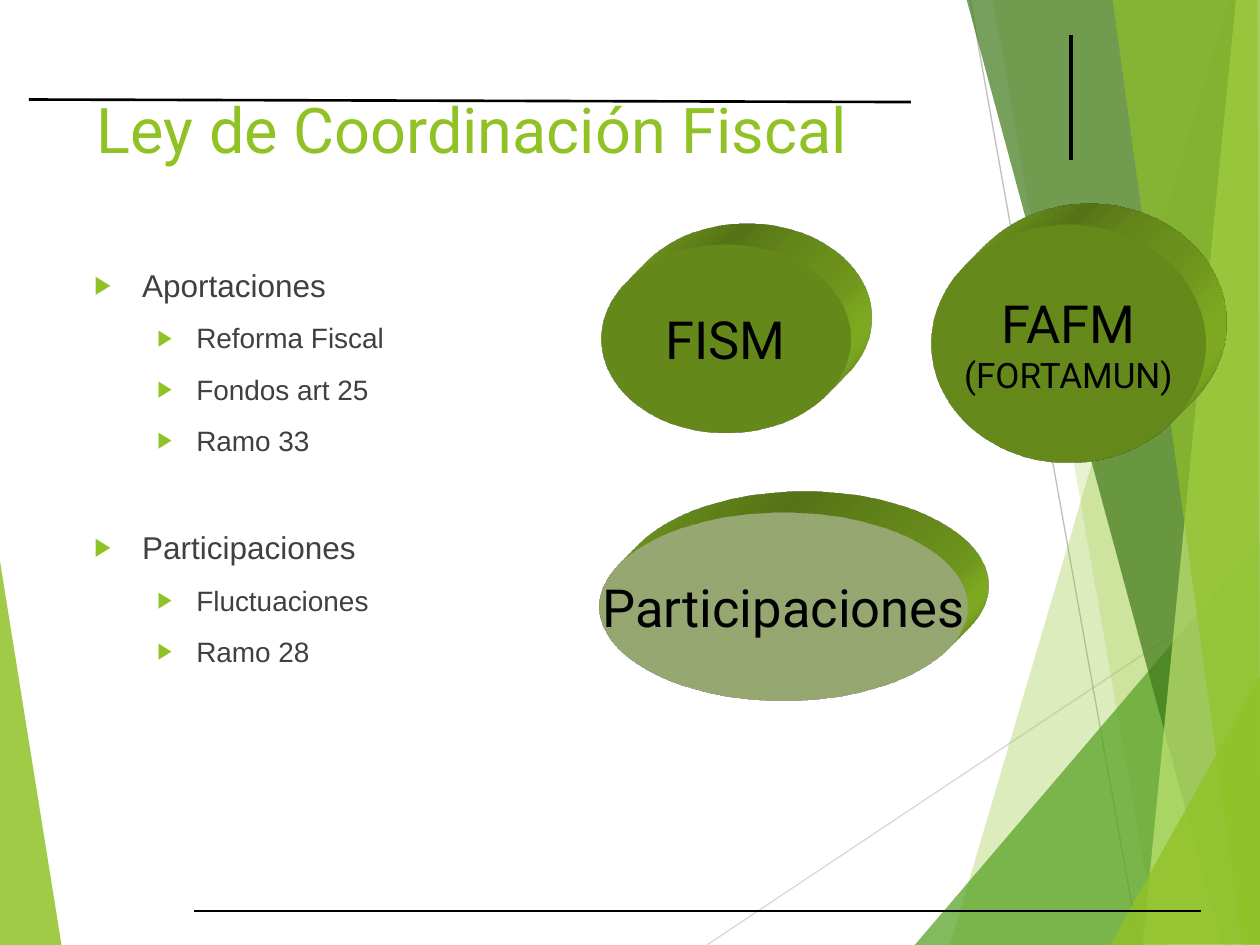
from lxml import etree
from pptx import Presentation
from pptx.dml.color import RGBColor
from pptx.enum.shapes import MSO_CONNECTOR, MSO_SHAPE
from pptx.enum.text import MSO_ANCHOR, PP_ALIGN
from pptx.oxml import parse_xml
from pptx.oxml.ns import nsdecls, qn
from pptx.util import Pt

PX = 9144
STRAIGHT = MSO_CONNECTOR.STRAIGHT
OVAL = MSO_SHAPE.OVAL
TOP, MIDDLE = MSO_ANCHOR.TOP, MSO_ANCHOR.MIDDLE
LEFT, CENTER = PP_ALIGN.LEFT, PP_ALIGN.CENTER

GREEN = "90C226"
BLACK = "000000"

LEFT_FACET = ([(-1, 439), (49, 751), (-1, 750)], GREEN, 85)
RIGHT_FACETS = [
    ([(975, 0), (754, 750), (1002, 751), (1001, 1)], GREEN, 30),
    ([(788, -1), (919, 750), (1001, 750), (1001, -1)], GREEN, 20),
    ([(726, 750), (1000, 429), (1001, 750)], "54A021", 72),
    ([(767, -1), (970, 750), (1001, 749), (1001, -1)], "3F7819", 70),
    ([(981, -1), (907, 750), (1001, 750), (1000, -1)], "C0E474", 70),
    ([(883, -1), (986, 750), (1000, 750), (998, -1)], GREEN, 65),
    ([(881, 750), (1001, 535), (1001, 749)], GREEN, 80),
]
THIN_LINES = [
    ((561, 750), (1001, 457), "D9D9D9", 0.75),
    ((770, 0), (904, 750), "BFBFBF", 0.75),
]
RULES = [
    ((850, 28), (850, 127), BLACK, 1.75),
    ((723, 81), (23, 79), BLACK, 1.5),
    ((154, 723), (953, 723), BLACK, 1.5),
]
OUTLINE = [
    ("Aportaciones", ["Reforma Fiscal", "Fondos art 25", "Ramo 33"]),
    ("Participaciones", ["Fluctuaciones", "Ramo 28"]),
]
FUNDS = [
    ((477, 194, 198, 149), GREEN, [("FISM", 30)]),
    ((739, 178, 218, 189), GREEN, [("FAFM", 30), ("(FORTAMUN)", 20)]),
    ((476, 407, 292, 149), "D5EDA2", [("Participaciones", 30)]),
]


def rgb(value):
    """Return a colour from a hex string."""
    return RGBColor.from_string(value)


def emu(*lengths):
    """Turn px lengths into EMU."""
    return [n * PX for n in lengths]


def add_facet(s, points, color, alpha):
    """Draw a translucent polygon."""
    builder = s.shapes.build_freeform(*points[0], scale=PX)
    builder.add_line_segments(points[1:], close=True)
    sp = builder.convert_to_shape()
    sp.shadow.inherit = False
    sp.fill.solid()
    sp.fill.fore_color.rgb = rgb(color)
    sp.line.fill.background()
    clr = sp.fill._xPr.find(qn("a:solidFill"))[0]
    etree.SubElement(clr, qn("a:alpha")).set("val", str(alpha * 1000))


def add_line(s, start, end, color, width):
    """Draw a straight line."""
    line = s.shapes.add_connector(STRAIGHT, *emu(*start, *end))
    line.line.color.rgb = rgb(color)
    line.line.width = Pt(width)
    etree.SubElement(line._element.spPr, qn("a:effectLst"))


def set_frame(tf, anchor=TOP, wrap=True):
    """Set anchor and wrapping of a text frame."""
    tf.word_wrap = wrap
    tf.vertical_anchor = anchor


def add_bullet(p, level):
    """Give a paragraph its green triangle and hanging indent."""
    pPr = p._p.get_or_add_pPr()
    margin, hang = emu(81, 31) if level else emu(38, 38)
    pPr.set("marL", str(margin))
    pPr.set("indent", str(-hang))
    for xml in (
        f'<a:buClr {nsdecls("a")}><a:srgbClr val="{GREEN}"/></a:buClr>',
        f'<a:buSzPct {nsdecls("a")} val="80000"/>',
        f'<a:buFont {nsdecls("a")} typeface="Arial"/>',
        f'<a:buChar {nsdecls("a")} char="▶"/>',
    ):
        pPr.append(parse_xml(xml))


def write(tf, text, size, font="Roboto", color=BLACK, align=LEFT,
          before=0, level=None):
    """Write one paragraph, with a bullet when it has a level."""
    p = tf.paragraphs[0]
    if p.runs:
        p = tf.add_paragraph()
    p.alignment = align
    p.space_before = Pt(before)
    if level is not None:
        p.level = level
        add_bullet(p, level)
    r = p.add_run()
    r.text = text
    r.font.size = Pt(size)
    r.font.name = font
    r.font.color.rgb = rgb(color)


def add_text(s, box):
    """Add an empty text box and return its frame."""
    tf = s.shapes.add_textbox(*emu(*box)).text_frame
    set_frame(tf)
    return tf


def add_outline(s, box):
    """Write the two-level bullet list."""
    tf = add_text(s, box)
    style = {"font": "Arial", "color": "404040"}
    for i, (heading, items) in enumerate(OUTLINE):
        write(tf, heading, 18, before=40.7 if i else 0, level=0, **style)
        for item in items:
            write(tf, item, 16, before=10, level=1, **style)


def extrude(sp):
    """Give a shape depth towards the top right."""
    spPr = sp._element.spPr
    spPr.append(parse_xml(
        f'<a:scene3d {nsdecls("a")}><a:camera prst="legacyObliqueTopRight"/>'
        '<a:lightRig rig="legacyFlat3" dir="b"/></a:scene3d>'))
    spPr.append(parse_xml(
        f'<a:sp3d {nsdecls("a")} extrusionH="430200" prstMaterial="legacyMatte">'
        '<a:bevelT w="13500" h="13500" prst="angle"/>'
        '<a:bevelB w="13500" h="13500" prst="angle"/>'
        f'<a:extrusionClr><a:srgbClr val="{GREEN}"/></a:extrusionClr></a:sp3d>'))


def add_fund(s, box, fill, lines):
    """Draw a solid ellipse with centred text."""
    sp = s.shapes.add_shape(OVAL, *emu(*box))
    sp.shadow.inherit = False
    sp.fill.solid()
    sp.fill.fore_color.rgb = rgb(fill)
    sp.line.fill.background()
    extrude(sp)
    set_frame(sp.text_frame, MIDDLE, False)
    for text, size in lines:
        write(sp.text_frame, text, size, align=CENTER)


def main():
    """Build the slide and save it."""
    prs = Presentation()
    prs.slide_width, prs.slide_height = emu(1000, 750)
    s = prs.slides.add_slide(prs.slide_layouts[6])
    add_facet(s, *LEFT_FACET)
    for line in THIN_LINES:
        add_line(s, *line)
    for facet in RIGHT_FACETS:
        add_facet(s, *facet)
    for rule in RULES:
        add_line(s, *rule)
    title = add_text(s, (67, 67, 694, 144))
    write(title, "Ley de Coordinación Fiscal", 36, color=GREEN)
    add_outline(s, (65, 206, 900, 407))
    for fund in FUNDS:
        add_fund(s, *fund)
    prs.save("out.pptx")


if __name__ == "__main__":
    main()
